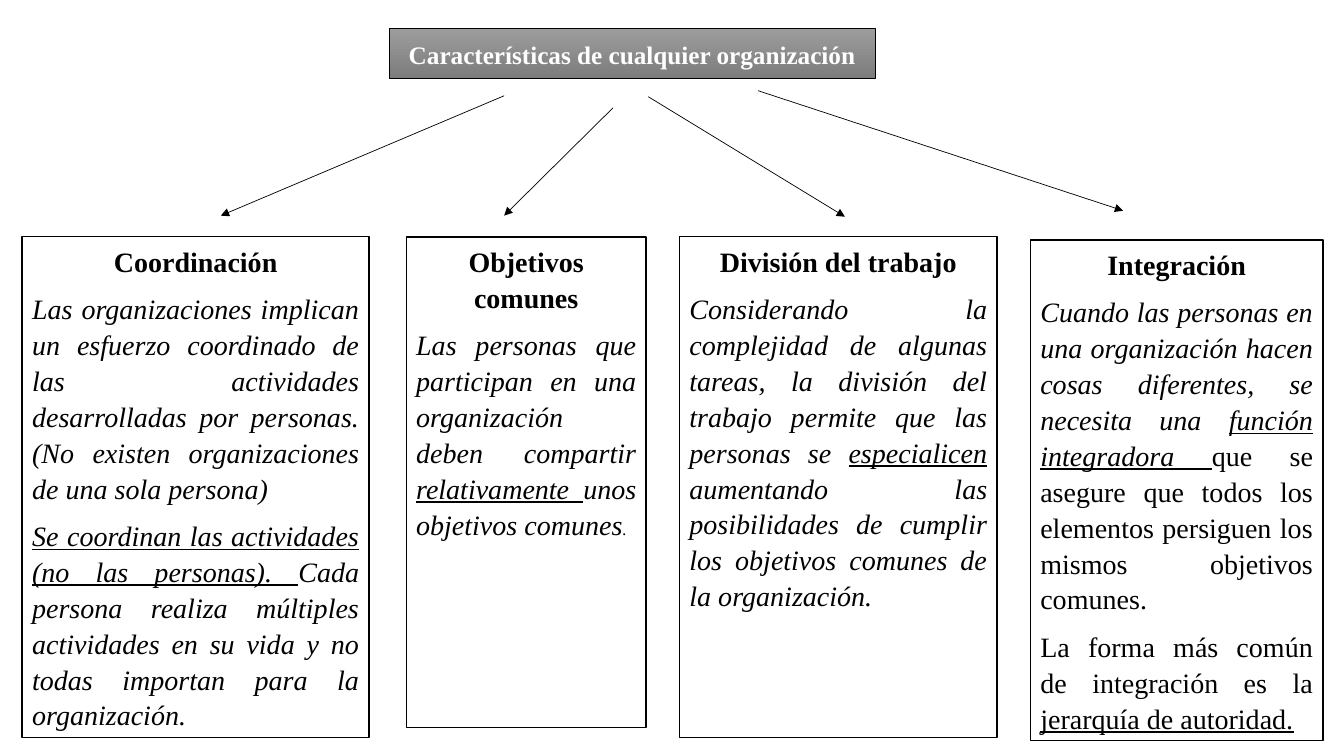
from dataclasses import dataclass
from typing import NamedTuple

from lxml.etree import SubElement
from pptx import Presentation
from pptx.dml.color import RGBColor
from pptx.enum.shapes import MSO_CONNECTOR, MSO_SHAPE
from pptx.enum.text import MSO_ANCHOR, MSO_AUTO_SIZE, PP_ALIGN
from pptx.oxml.ns import qn
from pptx.util import Inches, Pt

SLIDE_WIDTH, SLIDE_HEIGHT = Inches(13.33), Inches(7.5)


@dataclass(frozen=True)
class Theme:
    font: str = "Times New Roman"
    ink: RGBColor = RGBColor(0, 0, 0)
    paper: RGBColor = RGBColor(255, 255, 255)
    banner_top: RGBColor = RGBColor(0x9D, 0x9D, 0x9D)
    banner_bottom: RGBColor = RGBColor(0x7C, 0x7C, 0x7C)
    banner_size: Pt = Pt(18)
    column_size: Pt = Pt(20)
    small_size: Pt = Pt(12)
    thin: Pt = Pt(0.5)
    border: Pt = Pt(1)
    line_spacing: float = 1.07
    space_after: Pt = Pt(8)


THEME = Theme()


class Box(NamedTuple):
    """A region in percent of the slide's width and height."""
    left: float
    top: float
    width: float
    height: float


class Column(NamedTuple):
    """Each paragraph is a list of (text, marks): i italic, u underlined, s small."""
    box: Box
    heading: str
    paragraphs: list


BANNER = Box(28.96, 3.73, 36.16, 6.67)

COLUMNS = [
    Column(Box(1.65, 31.33, 25.81, 66.27), "Coordinación", [
        [("Las organizaciones implican un esfuerzo coordinado de las actividades "
          "desarrolladas por personas. (No existen organizaciones de una sola persona)", "i")],
        [("Se coordinan las actividades (no las personas). ", "iu"),
         ("Cada persona realiza múltiples actividades en su vida y no todas "
          "importan para la organización.", "i")],
    ]),
    Column(Box(30.23, 31.33, 17.85, 64.93), "Objetivos comunes", [
        [("Las personas que participan en una organización deben compartir ", "i"),
         ("relativamente ", "iu"),
         ("unos objetivos comunes", "i"),
         (".", "is")],
    ]),
    Column(Box(50.56, 31.33, 23.63, 66.27), "División del trabajo", [
        [("Considerando la complejidad de algunas tareas, la división del trabajo "
          "permite que las personas se ", "i"),
         ("especialicen", "iu"),
         (" aumentando las posibilidades de cumplir los objetivos comunes "
          "de la organización.", "i")],
    ]),
    Column(Box(76.67, 31.73, 21.76, 66.27), "Integración", [
        [("Cuando las personas en una organización hacen cosas diferentes, "
          "se necesita una ", "i"),
         ("función integradora", "iu"),
         (" ", "u"),
         ("que se asegure que todos los elementos persiguen los mismos "
          "objetivos comunes.", "")],
        [("La forma más común de integración es la ", ""),
         ("jerarquía de autoridad.", "u")],
    ]),
]

# Start and end of each arrow, in percent of the slide
ARROWS = [
    ((37.51, 12.67), (16.43, 28.53)),
    ((45.61, 14.27), (37.51, 28.53)),
    ((48.24, 12.8), (62.87, 28.67)),
    ((56.41, 12), (83.57, 27.87)),
]


def across(percent):
    return round(SLIDE_WIDTH * percent / 100)


def down(percent):
    return round(SLIDE_HEIGHT * percent / 100)


def frame(box):
    return across(box.left), down(box.top), across(box.width), down(box.height)


def outline(shape, width):
    shape.line.color.rgb = THEME.ink
    shape.line.width = width


def format_paragraph(paragraph, alignment):
    paragraph.alignment = alignment
    paragraph.line_spacing = THEME.line_spacing
    paragraph.space_before = Pt(0)
    paragraph.space_after = THEME.space_after


def add_run(paragraph, text, size, color, bold=False, marks=""):
    run = paragraph.add_run()
    run.text = text
    font = run.font
    font.name, font.size, font.bold = THEME.font, size, bold
    font.color.rgb = color
    font.italic = "i" in marks
    font.underline = "u" in marks


def add_banner(slide, box, text):
    banner = slide.shapes.title
    banner.left, banner.top, banner.width, banner.height = frame(box)
    banner.fill.gradient()
    banner.fill.gradient_angle = 270
    first, last = banner.fill.gradient_stops
    first.color.rgb, last.color.rgb = THEME.banner_top, THEME.banner_bottom
    outline(banner, THEME.thin)
    banner.text_frame.auto_size = MSO_AUTO_SIZE.NONE
    banner.text_frame.vertical_anchor = MSO_ANCHOR.MIDDLE
    paragraph = banner.text_frame.paragraphs[0]
    format_paragraph(paragraph, PP_ALIGN.CENTER)
    add_run(paragraph, text, THEME.banner_size, THEME.paper, bold=True)


def add_column(slide, column):
    panel = slide.shapes.add_shape(MSO_SHAPE.RECTANGLE, *frame(column.box))
    panel.shadow.inherit = False
    panel.fill.solid()
    panel.fill.fore_color.rgb = THEME.paper
    outline(panel, THEME.border)
    body = panel.text_frame
    body.word_wrap = True
    body.vertical_anchor = MSO_ANCHOR.TOP
    heading = body.paragraphs[0]
    format_paragraph(heading, PP_ALIGN.CENTER)
    add_run(heading, column.heading, THEME.column_size, THEME.ink, bold=True)
    for runs in column.paragraphs:
        paragraph = body.add_paragraph()
        format_paragraph(paragraph, PP_ALIGN.JUSTIFY)
        for text, marks in runs:
            size = THEME.small_size if "s" in marks else THEME.column_size
            add_run(paragraph, text, size, THEME.ink, marks=marks)


def add_arrow(slide, start, end):
    arrow = slide.shapes.add_connector(
        MSO_CONNECTOR.STRAIGHT,
        across(start[0]), down(start[1]), across(end[0]), down(end[1]))
    outline(arrow, THEME.thin)
    SubElement(arrow.line._get_or_add_ln(), qn("a:tailEnd"), type="triangle")
    SubElement(arrow._element.spPr, qn("a:effectLst"))


def main():
    presentation = Presentation()
    presentation.slide_width, presentation.slide_height = SLIDE_WIDTH, SLIDE_HEIGHT
    title_only = presentation.slide_layouts[5]
    slide = presentation.slides.add_slide(title_only)
    add_banner(slide, BANNER, "Características de cualquier organización")
    for column in COLUMNS:
        add_column(slide, column)
    for start, end in ARROWS:
        add_arrow(slide, start, end)
    presentation.save("out.pptx")


if __name__ == "__main__":
    main()
